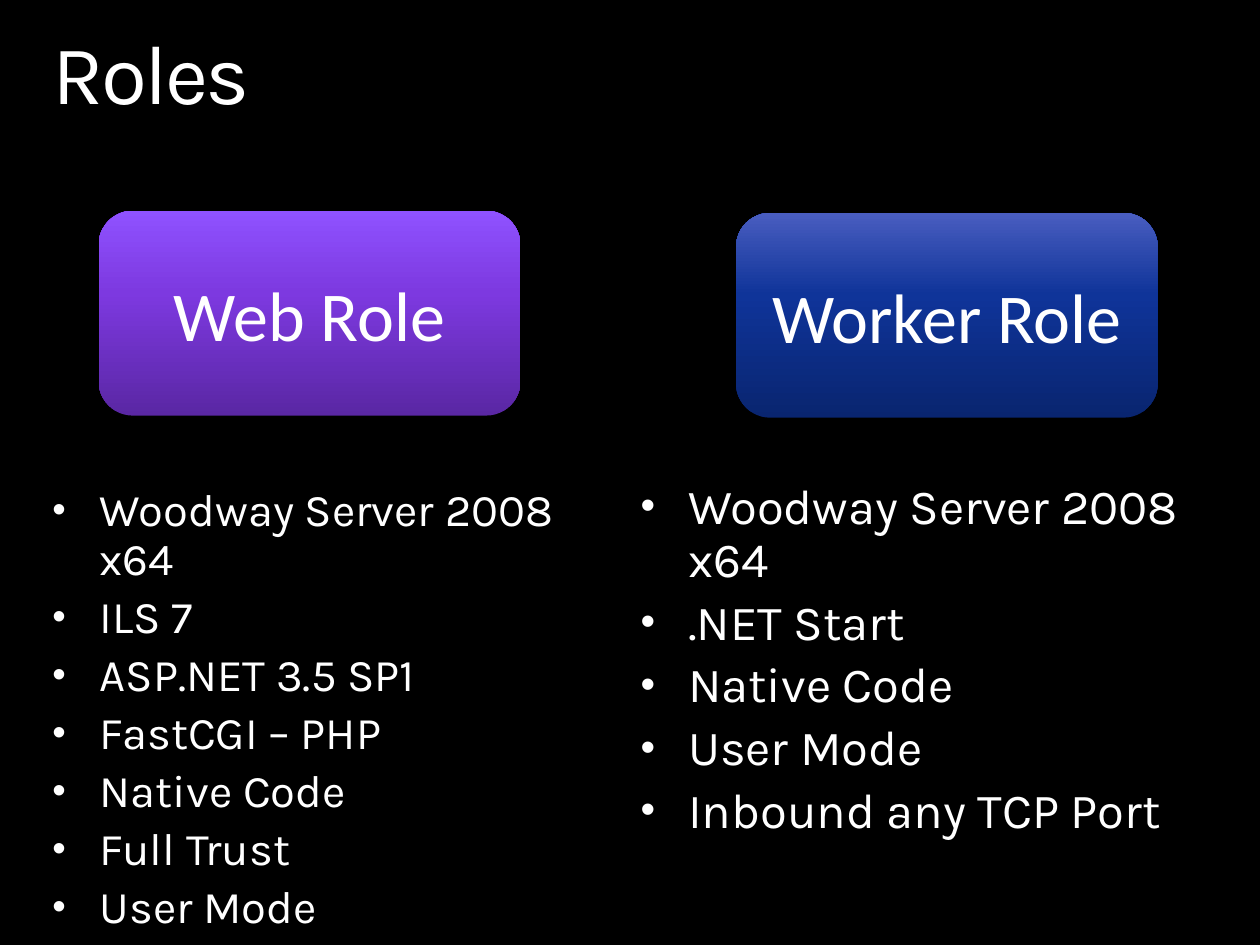
"""Build the Roles slide comparing the web role with the worker role."""
from dataclasses import dataclass

from lxml import etree
from pptx import Presentation
from pptx.dml.color import RGBColor
from pptx.enum import shapes, text
from pptx.oxml import ns
from pptx.util import Pt


@dataclass(frozen=True)
class Theme:
    background: str = "000000"
    ink: str = "FFFFFF"
    text_font: str = "Karla"
    badge_font: str = "Calibri"
    title_size: float = 48
    badge_size: float = 40
    bullet_percent: int = 85
    line_spacing: float = 0.9


@dataclass(frozen=True)
class Box:
    left: float
    top: float
    width: float
    height: float


@dataclass(frozen=True)
class Role:
    name: str
    badge: Box
    gradient: tuple[str, str, str]
    listing: Box
    feature_size: float
    indent: float
    features: tuple[str, ...]


THEME = Theme()
GRADIENT_STOPS = (0, 60, 100)
TITLE_BOX = Box(30, 18, 660, 52.5)
ROLES = (
    Role("Web Role", Box(56.4, 120.5, 241, 117), ("5A27A4", "7D39E0", "8F52FF"),
         Box(30, 278.5, 324, 254), 25.9, 27,
         ("Woodway Server 2008 x64", "ILS 7", "ASP.NET 3.5 SP1", "FastCGI – PHP",
          "Native Code", "Full Trust", "User Mode")),
    Role("Worker Role", Box(420.6, 121.7, 241, 117), ("092570", "0F3499", "495DC0"),
         Box(366, 275.5, 324, 180), 28, 27.2,
         ("Woodway Server 2008 x64", ".NET Start", "Native Code", "User Mode",
          "Inbound any TCP Port")),
)


def place(item, box: Box) -> None:
    """Move and size a shape to a box given in points."""
    item.left, item.top = Pt(box.left), Pt(box.top)
    item.width, item.height = Pt(box.width), Pt(box.height)


def style_runs(paragraph, font_name: str, size: float) -> None:
    """Format every run of a paragraph."""
    for run in paragraph.runs:
        run.font.name = font_name
        run.font.size = Pt(size)
        run.font.color.rgb = RGBColor.from_string(THEME.ink)


def prepare_frame(placeholder, box: Box):
    """Place a text placeholder without insets and return its frame."""
    place(placeholder, box)
    frame = placeholder.text_frame
    frame.margin_left = frame.margin_top = frame.margin_right = frame.margin_bottom = 0
    frame.vertical_anchor = text.MSO_ANCHOR.TOP
    frame.auto_size = text.MSO_AUTO_SIZE.NONE
    frame.word_wrap = True
    return frame


def draw_title(placeholder, wording: str) -> None:
    """Fill the title placeholder."""
    frame = prepare_frame(placeholder, TITLE_BOX)
    frame.text = wording
    heading = frame.paragraphs[0]
    heading.alignment = text.PP_ALIGN.LEFT
    heading.line_spacing = THEME.line_spacing
    style_runs(heading, THEME.text_font, THEME.title_size)
    heading.runs[0].font._element.set("spc", "-150")


def draw_features(placeholder, role: Role) -> None:
    """Fill a body placeholder with the bulleted features of a role."""
    frame = prepare_frame(placeholder, role.listing)
    frame.text = "\n".join(role.features)
    for feature in frame.paragraphs:
        properties = feature._p.get_or_add_pPr()
        properties.set("marL", str(Pt(role.indent)))
        properties.set("indent", str(-Pt(role.indent)))
        etree.SubElement(properties, ns.qn("a:buSzPct"), val=str(THEME.bullet_percent * 1000))
        feature.line_spacing = THEME.line_spacing
        style_runs(feature, THEME.text_font, role.feature_size)
    frame.paragraphs[0].space_before = Pt(0)


def fill_gradient(shape, colours: tuple[str, ...]) -> None:
    """Fill a shape with a gradient rising from the bottom edge."""
    shape.fill.gradient()
    shape.fill.gradient_angle = 90
    stops = shape._element.spPr.find(".//" + ns.qn("a:gsLst"))
    for stop in list(stops):
        stops.remove(stop)
    for position, colour in zip(GRADIENT_STOPS, colours):
        stop = etree.SubElement(stops, ns.qn("a:gs"), pos=str(position * 1000))
        etree.SubElement(stop, ns.qn("a:srgbClr"), val=colour)


def draw_badge(slide, role: Role) -> None:
    """Draw the rounded badge that names a role."""
    badge = slide.shapes.add_shape(shapes.MSO_SHAPE.ROUNDED_RECTANGLE, 0, 0, 0, 0)
    place(badge, role.badge)
    badge.shadow.inherit = False
    badge.line.fill.background()
    fill_gradient(badge, role.gradient)
    frame = badge.text_frame
    frame.word_wrap = True
    frame.vertical_anchor = text.MSO_ANCHOR.MIDDLE
    frame.text = role.name
    label = frame.paragraphs[0]
    label.alignment = text.PP_ALIGN.CENTER
    style_runs(label, THEME.badge_font, THEME.badge_size)


def main() -> None:
    """Build and save the slide."""
    deck = Presentation()
    deck.slide_width, deck.slide_height = Pt(720), Pt(540)
    slide = deck.slides.add_slide(deck.slide_layouts.get_by_name("Two Content"))
    slide.background.fill.solid()
    slide.background.fill.fore_color.rgb = RGBColor.from_string(THEME.background)
    title, *listings = slide.placeholders
    draw_title(title, "Roles")
    for listing, role in zip(listings, ROLES):
        draw_features(listing, role)
        draw_badge(slide, role)
    deck.save("out.pptx")


if __name__ == "__main__":
    main()
